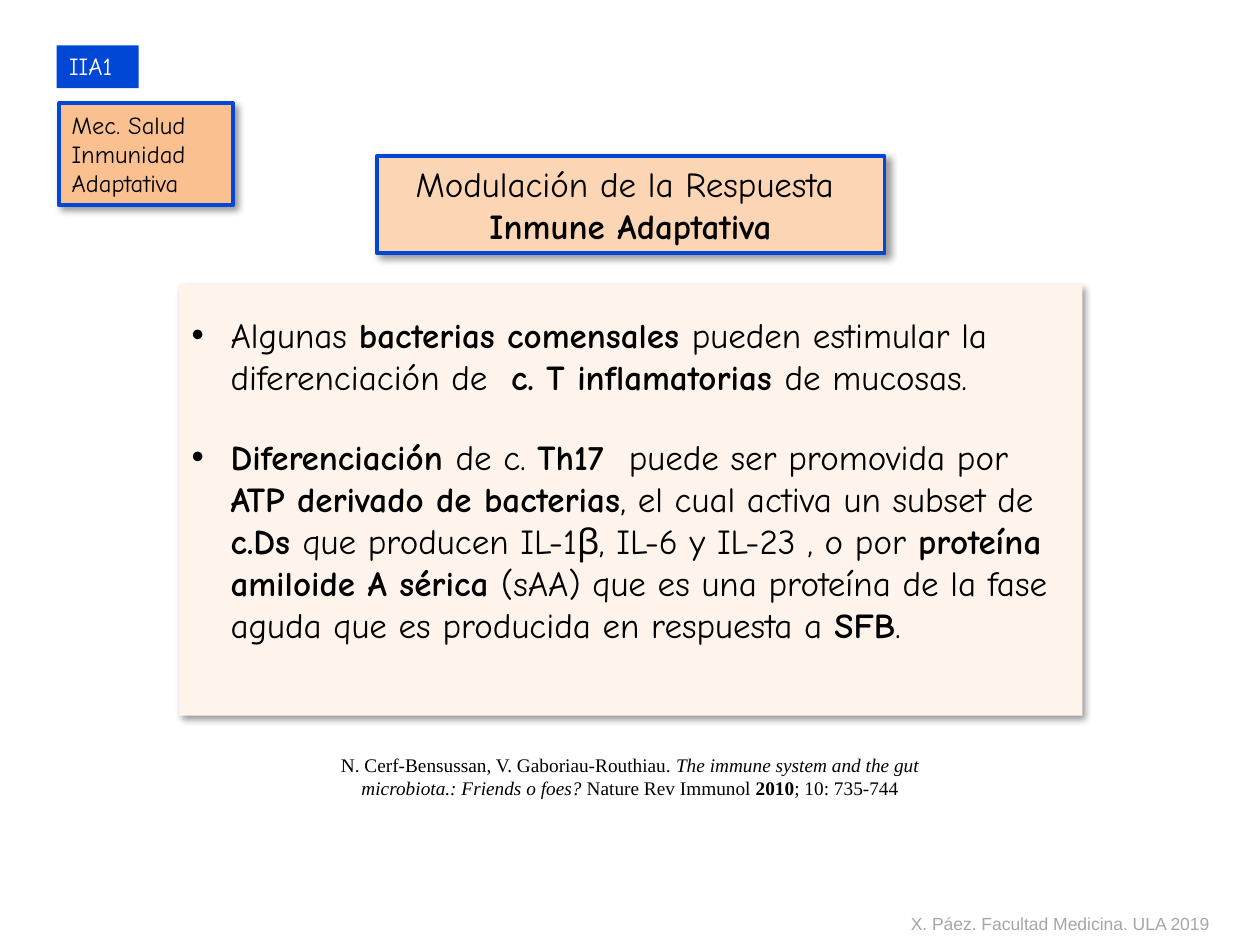
from dataclasses import dataclass, field
from typing import Any, Optional

import pptx
import pptx.dml.color
import pptx.enum.shapes
import pptx.enum.text
import pptx.oxml
import pptx.oxml.ns
import pptx.util

Inches, Pt = pptx.util.Inches, pptx.util.Pt
ALIGN = pptx.enum.text.PP_ALIGN
COLORS = {"blue": "0047D6", "cream": "FEF4EC", "peach": "FCD5B5", "orange": "FAC090",
          "black": "000000", "white": "FFFFFF", "gray": "A6A6A6"}
SHADOW = (
    f'<a:effectLst {pptx.oxml.ns.nsdecls("a")}>'
    f'<a:outerShdw blurRad="{Pt(4)}" dist="{Pt(3)}" dir="2700000" algn="tl" rotWithShape="0">'
    f'<a:srgbClr val="{COLORS["black"]}"><a:alpha val="40000"/></a:srgbClr>'
    '</a:outerShdw></a:effectLst>')

# A run is its text and style: "" plain, "b" bold, "i" italic.
Run = tuple[str, str]


@dataclass
class Box:
    place: tuple[float, float, float, float]
    paras: list[list[Run]]
    size: float
    face: str = "Comic Neue"
    ink: str = "black"
    fill: Optional[str] = None
    edge: Optional[str] = None
    shade: bool = False
    wrap: bool = True
    top: float = 0.05
    para: dict[str, Any] = field(default_factory=lambda: {"alignment": ALIGN.LEFT})
    gap: float = 0
    hang: float = 0


def rgb(name: str) -> pptx.dml.color.RGBColor:
    return pptx.dml.color.RGBColor.from_string(COLORS[name])


def assign(item: Any, values: dict[str, Any]) -> None:
    for name, value in values.items():
        setattr(item, name, value)


def paint(shape: Any, box: Box) -> None:
    if box.fill:
        shape.fill.solid()
        shape.fill.fore_color.rgb = rgb(box.fill)
    if box.edge:
        shape.line.color.rgb = rgb(box.edge)
        shape.line.width = Pt(2.25)
    elif box.fill:
        shape.line.fill.background()
    if box.shade:
        shape._element.spPr.append(pptx.oxml.parse_xml(SHADOW))
    elif box.fill:
        shape.shadow.inherit = False


def write(shape: Any, box: Box) -> None:
    frame = shape.text_frame
    assign(frame, {"word_wrap": box.wrap, "margin_top": Inches(box.top),
                   "auto_size": pptx.enum.text.MSO_AUTO_SIZE.NONE,
                   "vertical_anchor": pptx.enum.text.MSO_ANCHOR.TOP})
    for count, runs in enumerate(box.paras):
        para = frame.add_paragraph() if count else frame.paragraphs[0]
        assign(para, {"space_before": Pt(box.gap if count else 0), **box.para})
        if box.hang:
            props = para._p.get_or_add_pPr()
            props.set("marL", str(Inches(box.hang)))
            props.set("indent", str(-Inches(box.hang)))
        for text, style in runs:
            run = para.add_run()
            run.text = text
            assign(run.font, {"name": box.face, "size": Pt(box.size),
                              "bold": style == "b", "italic": style == "i"})
            run.font.color.rgb = rgb(box.ink)


def draw(slide: Any, box: Box, holder: Any = None) -> None:
    """Draw a box, in the given placeholder if there is one."""
    place = [Inches(n) for n in box.place]
    if holder is not None:
        shape = holder
        assign(shape, dict(zip(("left", "top", "width", "height"), place)))
    elif box.fill:
        shape = slide.shapes.add_shape(pptx.enum.shapes.MSO_SHAPE.RECTANGLE, *place)
    else:
        shape = slide.shapes.add_textbox(*place)
    paint(shape, box)
    write(shape, box)


CENTER = {"alignment": ALIGN.CENTER}
TITLE = Box((2.99, 1.24, 4.03, 0.77),
            [[("Modulación de la Respuesta ", "")], [("Inmune Adaptativa", "b")]],
            20, fill="peach", edge="blue", shade=True, para=CENTER)
POINTS = Box((1.42, 2.26, 7.17, 3.42), [
    [("Algunas ", ""), ("bacterias comensales ", "b"),
     ("pueden estimular la diferenciación de  ", ""),
     ("c. T inflamatorias ", "b"), ("de mucosas.", "")],
    [("Diferenciación ", "b"), ("de c. ", ""), ("Th17  ", "b"),
     ("puede ser promovida por ", ""), ("ATP derivado de bacterias", "b"),
     (", el cual activa un subset de ", ""), ("c.Ds ", "b"),
     ("que producen IL-1β, IL-6 y IL-23 , o por ", ""),
     ("proteína amiloide A sérica ", "b"),
     ("(sAA) que es una proteína de la fase aguda que es producida en respuesta a ", ""),
     ("SFB", "b"), (".", "")],
], 20, fill="cream", shade=True, top=0.23, gap=21.6, hang=0.31)
NOTES = [
    Box((7.13, 7.2, 2.59, 0.27), [[("X. Páez. Facultad Medicina. ULA 2019", "")]],
        10, face="Arial", ink="gray", wrap=False),
    Box((2.6, 5.93, 4.8, 0.47), [
        [("N. Cerf-Bensussan, V. Gaboriau-Routhiau. ", ""),
         ("The immune system and the gut microbiota.: Friends o foes? ", "i"),
         ("Nature Rev Immunol ", ""), ("2010", "b"), ("; 10: 735-744", "")],
    ], 11, face="Times New Roman", para=CENTER),
    Box((0.45, 0.36, 0.65, 0.34), [[("IIA1", "")]], 14, ink="white", fill="blue", wrap=False),
    Box((0.47, 0.82, 1.38, 0.81), [[("Mec. Salud", "")], [("Inmunidad Adaptativa", "")]],
        14, fill="orange", edge="blue", shade=True),
]


def main() -> None:
    deck = pptx.Presentation()
    assign(deck, {"slide_width": Inches(10), "slide_height": Inches(7.5)})
    slide = deck.slides.add_slide(deck.slide_layouts[1])
    draw(slide, TITLE, slide.shapes.title)
    draw(slide, POINTS, slide.placeholders[1])
    for note in NOTES:
        draw(slide, note)
    deck.save("out.pptx")


if __name__ == "__main__":
    main()
